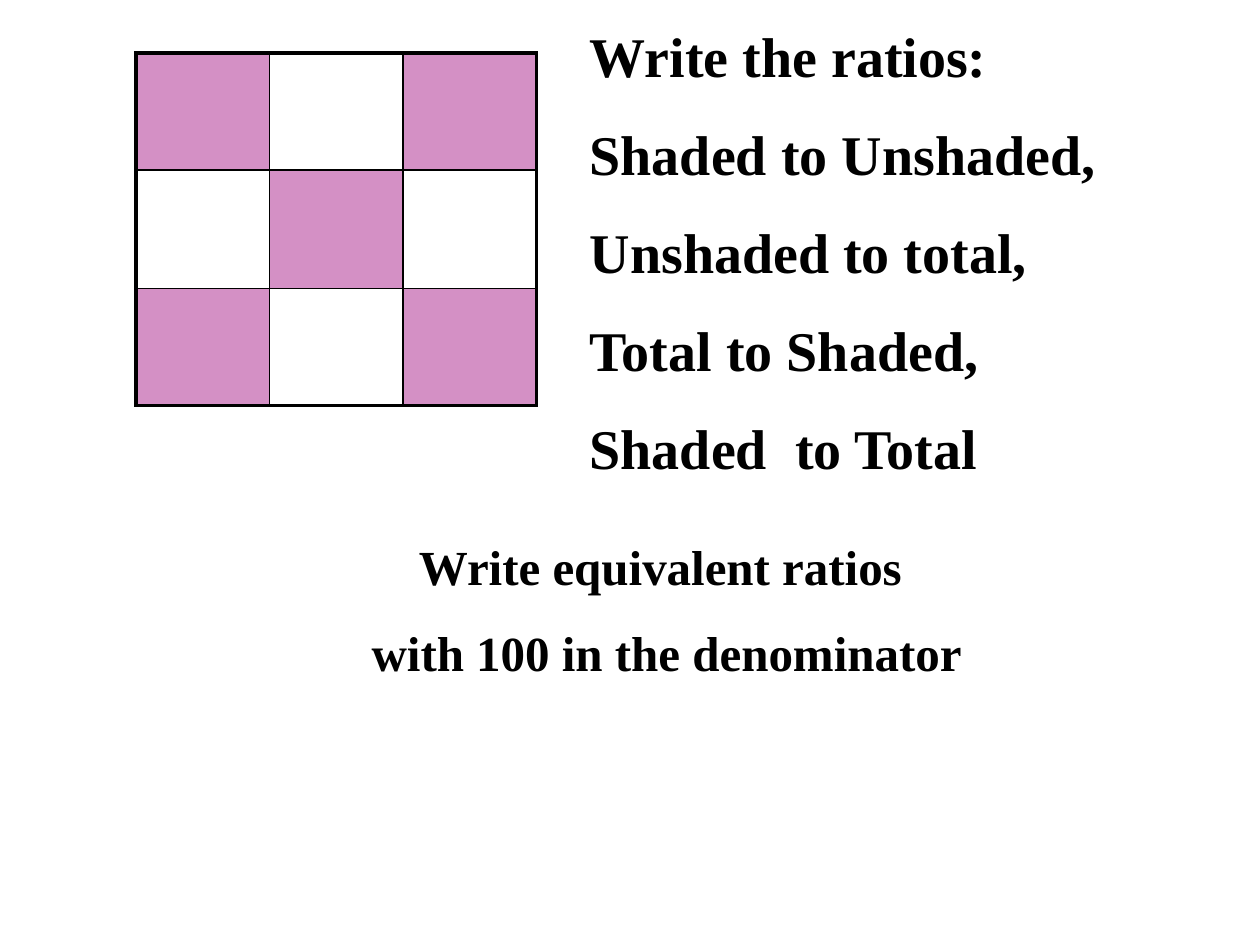
import dataclasses
import itertools

import pptx
import pptx.dml.color
import pptx.enum.text
import pptx.oxml
import pptx.oxml.ns
import pptx.util

Inches = pptx.util.Inches
Pt = pptx.util.Pt
ALIGN = pptx.enum.text.PP_ALIGN

COLORS = {"ink": "000000", "shaded": "D490C5"}
OUTER_WIDTH = 2.25
INNER_WIDTH = 1
COLUMN_WIDTHS = [1.06, 1.06, 1.06]
ROW_HEIGHTS = [0.93, 0.94, 0.93]


@dataclasses.dataclass
class TextBlock:
    left: float
    top: float
    width: float
    height: float
    size: float
    gap: float
    align: ALIGN
    lines: list[str]


RATIOS = TextBlock(4.58, 0.08, 5.08, 3.87, 32, 17.6, ALIGN.LEFT, [
    "Write the ratios:",
    "Shaded to Unshaded,",
    "Unshaded to total,",
    "Total to Shaded,",
    "Shaded  to Total",
])
EQUIVALENTS = TextBlock(0.58, 4.17, 9.42, 1.28, 28, 15.2, ALIGN.CENTER, [
    "Write equivalent ratios ",
    "with 100 in the denominator",
])


def color(name: str) -> pptx.dml.color.RGBColor:
    return pptx.dml.color.RGBColor.from_string(COLORS[name])


def set_values(target, values: dict) -> None:
    for name, value in values.items():
        setattr(target, name, value)


def fill_text(box, block: TextBlock) -> None:
    set_values(box, {name: Inches(getattr(block, name))
                     for name in ("left", "top", "width", "height")})
    frame = box.text_frame
    set_values(frame, {
        "word_wrap": True,
        "auto_size": pptx.enum.text.MSO_AUTO_SIZE.NONE,
        "margin_top": Inches(0.09),
    })
    for index, line in enumerate(block.lines):
        para = frame.paragraphs[0] if index == 0 else frame.add_paragraph()
        set_values(para, {
            "alignment": block.align,
            "line_spacing": 1.0,
            "space_before": Pt(block.gap if index else 0),
        })
        properties = para._p.get_or_add_pPr()
        properties.set("marL", "0")
        properties.set("indent", "0")
        properties.append(pptx.oxml.parse_xml(
            f'<a:buNone {pptx.oxml.ns.nsdecls("a")}/>'))
        span = para.add_run()
        span.text = line
        set_values(span.font, {
            "name": "Times New Roman", "size": Pt(block.size), "bold": True})
        span.font.color.rgb = color("ink")


def add_border(cell, side: str, width: float) -> None:
    cell._tc.get_or_add_tcPr().append(pptx.oxml.parse_xml(
        f'<a:{side} {pptx.oxml.ns.nsdecls("a")} w="{Pt(width)}">'
        f'<a:solidFill><a:srgbClr val="{COLORS["ink"]}"/></a:solidFill>'
        f'</a:{side}>'))


def draw_grid(page) -> None:
    rows, columns = len(ROW_HEIGHTS), len(COLUMN_WIDTHS)
    grid = page.shapes.add_table(
        rows, columns, Inches(1.08), Inches(0.42),
        Inches(sum(COLUMN_WIDTHS)), Inches(sum(ROW_HEIGHTS))).table
    set_values(grid, {"first_row": False, "horz_banding": False})
    for column, width in zip(grid.columns, COLUMN_WIDTHS):
        column.width = Inches(width)
    for row, height in zip(grid.rows, ROW_HEIGHTS):
        row.height = Inches(height)
    for row, column in itertools.product(range(rows), range(columns)):
        cell = grid.cell(row, column)
        outer_sides = {
            "lnL": column == 0,
            "lnR": column == columns - 1,
            "lnT": row == 0,
            "lnB": row == rows - 1,
        }
        for side, is_outer in outer_sides.items():
            add_border(cell, side, OUTER_WIDTH if is_outer else INNER_WIDTH)
        if (row + column) % 2 == 0:
            cell.fill.solid()
            cell.fill.fore_color.rgb = color("shaded")
        else:
            cell.fill.background()


def main() -> None:
    deck = pptx.Presentation()
    set_values(deck, {"slide_width": Inches(10), "slide_height": Inches(7.5)})
    page = deck.slides.add_slide(deck.slide_layouts[1])
    title = page.shapes.title._element
    title.getparent().remove(title)
    draw_grid(page)
    fill_text(page.placeholders[1], RATIOS)
    fill_text(page.shapes.add_textbox(0, 0, 0, 0), EQUIVALENTS)
    deck.save("out.pptx")


if __name__ == "__main__":
    main()
